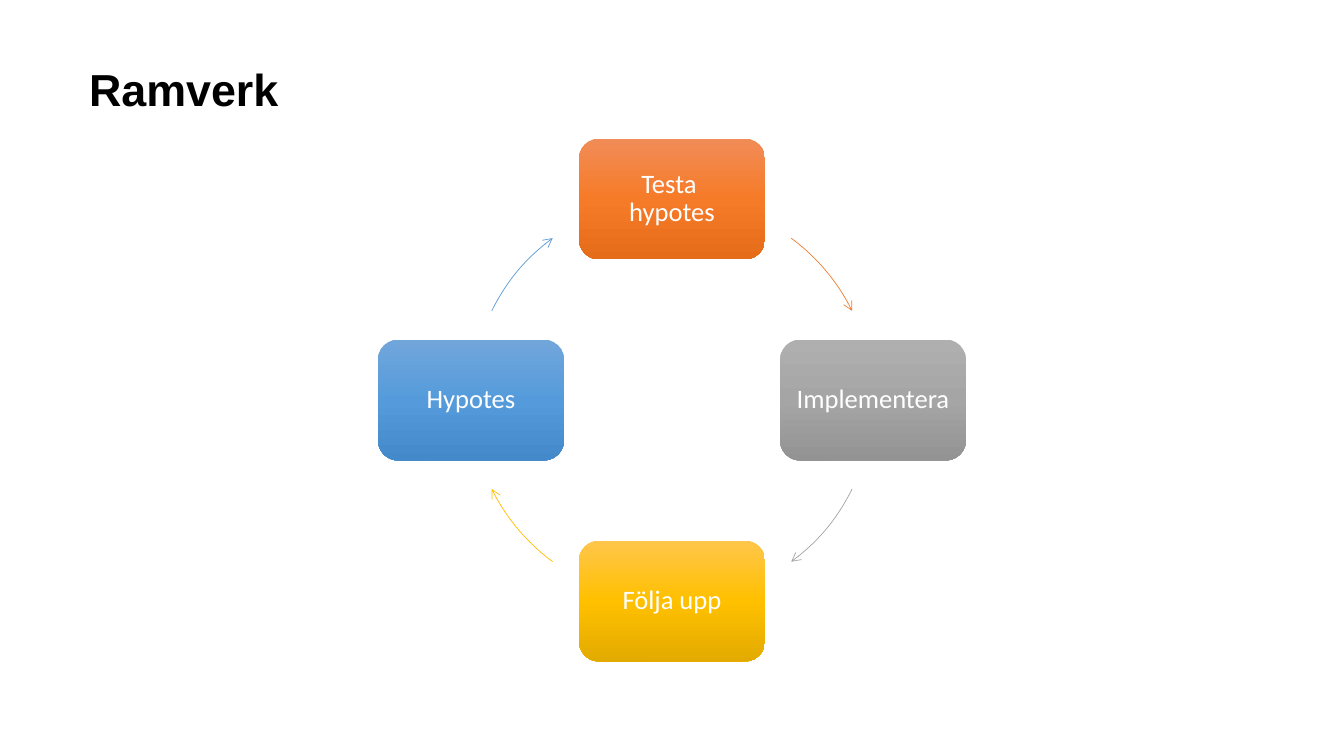
import copy

import pptx
import pptx.dml.color
import pptx.enum.shapes
import pptx.enum.text
import pptx.oxml
import pptx.oxml.ns
import pptx.util

PX = 914400 / 100.8
COLORS = {
    "title": "000000",
    "label": "FFFFFF",
    "orange": "ED7D31",
    "gray": "A5A5A5",
    "yellow": "FFC000",
    "blue": "5B9BD5",
}
# Top, middle and bottom colour of each box
GRADIENTS = {
    "orange": ("F18C57", "F67B28", "E56C19"),
    "gray": ("AFAFAF", "A5A5A5", "939393"),
    "yellow": ("FFC64B", "FFC000", "E3AB00"),
    "blue": ("71A6DB", "559BDB", "448ACA"),
}
# Label, colour, direction from the centre and first angle of the arc after it
STEPS = [
    ("Testa \vhypotes", "orange", (0, -1), 306.4),
    ("Implementera", "gray", (1, 0), 26.3),
    ("Följa upp", "yellow", (0, 1), 126.4),
    ("Hypotes", "blue", (-1, 0), 206.3),
]
STEP_WIDTH, STEP_HEIGHT = 186, 121
ARC_SWEEP = 27.3


def px(length):
    return pptx.util.Emu(round(length * PX))


def rgb(value):
    return pptx.dml.color.RGBColor.from_string(value)


def write_text(shape, text, *, size, font, color, bold=False, align="LEFT",
               anchor="TOP", margins=(10, 5)):
    frame = shape.text_frame
    frame.word_wrap = True
    frame.vertical_anchor = getattr(pptx.enum.text.MSO_ANCHOR, anchor)
    frame.margin_left = frame.margin_right = px(margins[0])
    frame.margin_top = frame.margin_bottom = px(margins[1])
    paragraph = frame.paragraphs[0]
    paragraph.text = text
    paragraph.alignment = getattr(pptx.enum.text.PP_ALIGN, align)
    paragraph.line_spacing = 0.9
    for run in paragraph.runs:
        run.font.size = pptx.util.Pt(size)
        run.font.name = font
        run.font.bold = bold
        run.font.color.rgb = rgb(color)


def fill_gradient(shape, colors):
    shape.fill.gradient()
    shape.fill.gradient_angle = 270
    stop_list = shape._element.spPr.find(".//" + pptx.oxml.ns.qn("a:gsLst"))
    stop_list.append(copy.deepcopy(stop_list[-1]))
    for index, (stop, color) in enumerate(zip(shape.fill.gradient_stops, colors)):
        stop.position = index / 2
        stop.color.rgb = rgb(color)


def add_title(slide, left, top, width, height):
    title = slide.shapes.add_textbox(px(left), px(top), px(width), px(height))
    write_text(title, "Ramverk", size=32, font="Arial",
               color=COLORS["title"], bold=True)


def add_step(slide, center_x, center_y, label, color):
    step = slide.shapes.add_shape(
        pptx.enum.shapes.MSO_SHAPE.ROUNDED_RECTANGLE,
        px(center_x - STEP_WIDTH / 2), px(center_y - STEP_HEIGHT / 2),
        px(STEP_WIDTH), px(STEP_HEIGHT))
    step.shadow.inherit = False
    step.line.fill.background()
    fill_gradient(step, GRADIENTS[color])
    write_text(step, label, size=19, font="Calibri", color=COLORS["label"],
               align="CENTER", anchor="MIDDLE", margins=(8, 8))


def add_arc_arrow(slide, left, top, size, start, color):
    arc = slide.shapes.add_shape(pptx.enum.shapes.MSO_SHAPE.ARC,
                                 px(left), px(top), px(size), px(size))
    # Arc angles are stored in 60000ths of a degree, adjustments in 100000ths
    for index, angle in enumerate((start, start + ARC_SWEEP)):
        arc.adjustments[index] = angle * 0.6
    arc.shadow.inherit = False
    arc.fill.background()
    arc.line.color.rgb = rgb(COLORS[color])
    arc.line.width = pptx.util.Pt(0.5)
    tail = pptx.oxml.parse_xml(
        f'<a:tailEnd {pptx.oxml.ns.nsdecls("a")} type="arrow"/>')
    arc.line._get_or_add_ln().append(tail)


def add_cycle(slide, left, top, size):
    """Place the steps on the circle inside the given square."""
    radius = size / 2
    for label, color, (across, down), arc_start in STEPS:
        add_step(slide, left + radius * (1 + across),
                 top + radius * (1 + down), label, color)
        add_arc_arrow(slide, left, top, size, arc_start, color)


def main():
    presentation = pptx.Presentation()
    presentation.slide_width = px(1344)
    presentation.slide_height = px(756)
    slide = presentation.slides.add_slide(presentation.slide_layouts[6])
    add_title(slide, 79, 63, 1119, 81)
    add_cycle(slide, 471, 199, 402)
    presentation.save("out.pptx")


if __name__ == "__main__":
    main()
